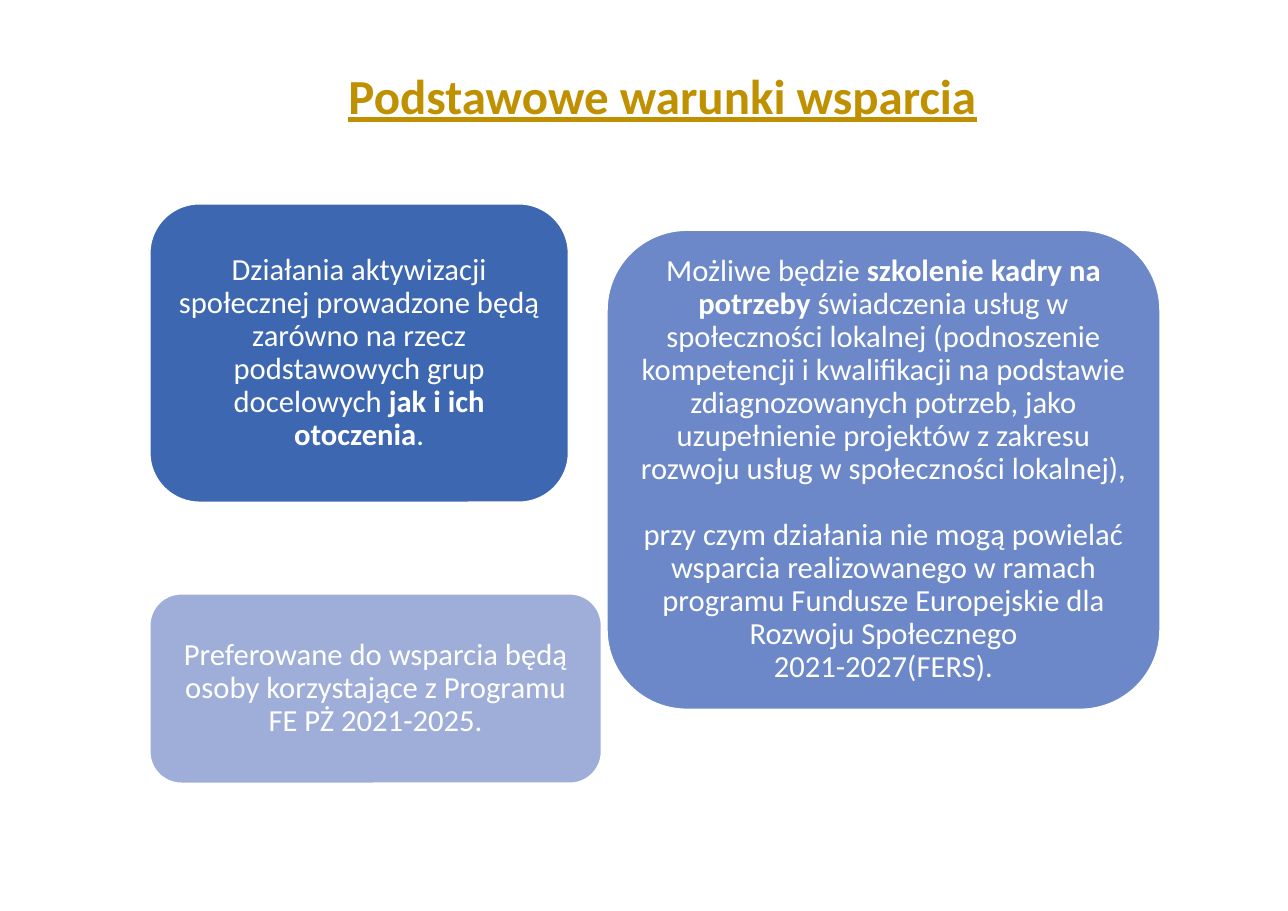
from dataclasses import dataclass

from pptx import Presentation
from pptx.dml.color import RGBColor
from pptx.enum.shapes import MSO_SHAPE
from pptx.enum.text import MSO_ANCHOR, MSO_AUTO_SIZE, PP_ALIGN
from pptx.util import Inches, Pt


@dataclass(frozen=True)
class Theme:
    font: str = "Calibri"
    title_size: int = 32
    body_size: int = 20
    paragraph_gap: float = 21.6
    line_spacing: float = 0.9
    gold: str = "BF9000"
    white: str = "FFFFFF"
    dark_blue: str = "3E67B2"
    mid_blue: str = "6C88C8"
    pale_blue: str = "9FAED8"


THEME = Theme()

# Grid of 100 columns by 100 rows
WIDTH, HEIGHT = Inches(11.69), Inches(8.27)
COLUMN, ROW = WIDTH / 100, HEIGHT / 100
LEFT_EDGE = 11.63

# Each paragraph is a list of (text, bold) runs; "\n" is a line break
ACTIVATION = [[
    ("Działania aktywizacji społecznej prowadzone będą zarówno na rzecz "
     "podstawowych grup docelowych ", False),
    ("jak i ich otoczenia", True),
    (".", False),
]]
TRAINING = [
    [
        ("Możliwe będzie ", False),
        ("szkolenie kadry na potrzeby ", True),
        ("świadczenia usług w społeczności lokalnej (podnoszenie kompetencji "
         "i kwalifikacji na podstawie zdiagnozowanych potrzeb, jako "
         "uzupełnienie projektów z zakresu rozwoju usług w społeczności "
         "lokalnej),", False),
    ],
    [
        ("przy czym działania nie mogą powielać wsparcia realizowanego "
         "w ramach programu Fundusze Europejskie dla Rozwoju Społecznego\n"
         "2021-2027(FERS).", False),
    ],
]
PREFERENCE = [[
    ("Preferowane do wsparcia będą osoby korzystające z Programu "
     "FE PŻ 2021-2025.", False),
]]


def grid_box(column, row, columns, rows):
    return (round(column * COLUMN), round(row * ROW),
            round(columns * COLUMN), round(rows * ROW))


def format_paragraph(paragraph, size, color):
    paragraph.alignment = PP_ALIGN.CENTER
    paragraph.line_spacing = THEME.line_spacing
    paragraph.font.name = THEME.font
    paragraph.font.size = Pt(size)
    paragraph.font.color.rgb = RGBColor.from_string(color)


def add_runs(paragraph, runs):
    for text, bold in runs:
        for index, line in enumerate(text.split("\n")):
            if index:
                paragraph.add_line_break()
            run = paragraph.add_run()
            run.text = line
            run.font.bold = bold


def set_title(slide, text, box):
    title = slide.shapes.title
    title.left, title.top, title.width, title.height = box
    frame = title.text_frame
    frame.text = text
    frame.auto_size = MSO_AUTO_SIZE.NONE
    frame.vertical_anchor = MSO_ANCHOR.BOTTOM
    paragraph = frame.paragraphs[0]
    format_paragraph(paragraph, THEME.title_size, THEME.gold)
    paragraph.font.bold = True
    paragraph.font.underline = True


def add_card(slide, paragraphs, fill, box):
    card = slide.shapes.add_shape(MSO_SHAPE.ROUNDED_RECTANGLE, *box)
    card.shadow.inherit = False
    card.fill.solid()
    card.fill.fore_color.rgb = RGBColor.from_string(fill)
    card.line.color.rgb = RGBColor.from_string(THEME.white)
    card.line.width = Pt(1)

    frame = card.text_frame
    frame.word_wrap = True
    frame.vertical_anchor = MSO_ANCHOR.MIDDLE
    frame.margin_left = frame.margin_right = Inches(0.08)
    frame.margin_top = frame.margin_bottom = Inches(0.08)
    for index, runs in enumerate(paragraphs):
        paragraph = frame.add_paragraph() if index else frame.paragraphs[0]
        format_paragraph(paragraph, THEME.body_size, THEME.white)
        if index:
            paragraph.space_before = Pt(THEME.paragraph_gap)
        add_runs(paragraph, runs)


def main():
    presentation = Presentation()
    presentation.slide_width, presentation.slide_height = WIDTH, HEIGHT
    slide = presentation.slides.add_slide(presentation.slide_layouts[5])

    # Heading
    set_title(slide, "Podstawowe warunki wsparcia",
              grid_box(17.79, 8.1, 67.32, 6.29))

    # Support conditions
    add_card(slide, ACTIVATION, THEME.dark_blue,
             grid_box(LEFT_EDGE, 22.37, 32.51, 32.77))
    add_card(slide, TRAINING, THEME.mid_blue,
             grid_box(47.13, 25.27, 42.94, 52.6))
    add_card(slide, PREFERENCE, THEME.pale_blue,
             grid_box(LEFT_EDGE, 65.18, 35.07, 20.8))

    presentation.save("out.pptx")


if __name__ == "__main__":
    main()
